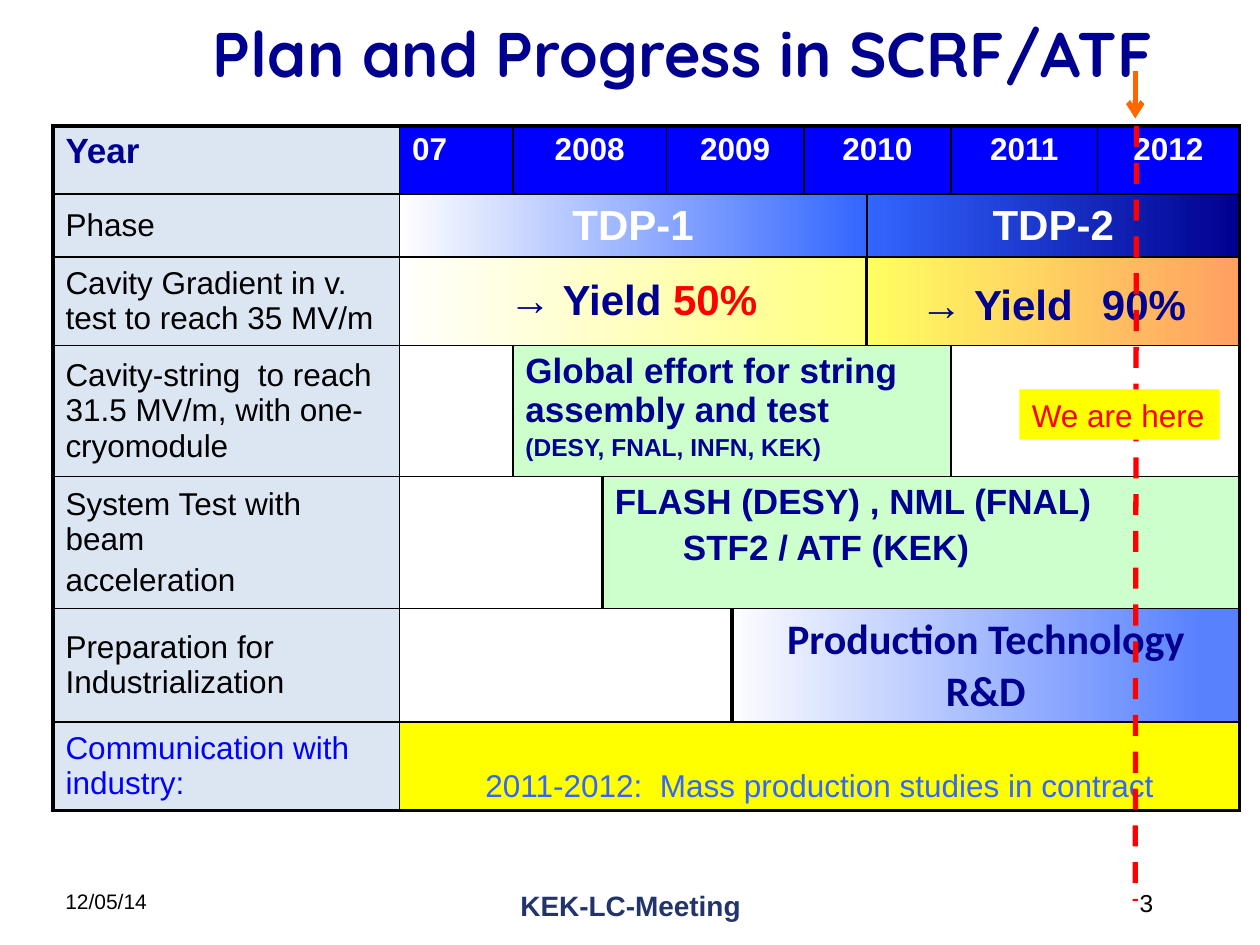
"""Build the SCRF/ATF plan and progress slide."""
from dataclasses import dataclass

from lxml import etree
from pptx import Presentation
from pptx.dml.color import RGBColor
from pptx.enum.dml import MSO_LINE
from pptx.enum.shapes import MSO_CONNECTOR, MSO_SHAPE
from pptx.enum.text import MSO_ANCHOR, PP_ALIGN
from pptx.oxml.ns import qn
from pptx.util import Inches, Pt

LEFT, CENTER, RIGHT = PP_ALIGN.LEFT, PP_ALIGN.CENTER, PP_ALIGN.RIGHT
TOP, MIDDLE, BOTTOM = MSO_ANCHOR.TOP, MSO_ANCHOR.MIDDLE, MSO_ANCHOR.BOTTOM
RECTANGLE, STRAIGHT, DASH = MSO_SHAPE.RECTANGLE, MSO_CONNECTOR.STRAIGHT, MSO_LINE.DASH
NAVY, BLACK, WHITE, RED, YELLOW = "000090", "000000", "FFFFFF", "FF0000", "FFFF00"
BLUE, SKY, PALE, MINT, ORANGE = "0000FF", "3366FF", "DCE6F2", "CCFFCC", "FF6600"
COLUMN_WIDTHS = (2.75, 0.9, 0.71, 0.51, 0.52, 0.57, 0.5, 0.67, 1.16, 1.13)
ROW_HEIGHTS = (0.54, 0.4, 0.53, 0.54, 0.76, 0.7, 0.7)
THIN, HEAVY = 1, 2.25


@dataclass(frozen=True)
class Run:
    text: str
    size: float = 18
    color: str = BLACK
    bold: bool = False
    font: str = "Arial"


@dataclass(frozen=True)
class Line:
    runs: tuple[Run, ...]
    align: PP_ALIGN = LEFT
    indent: float = 0


@dataclass(frozen=True)
class Gradient:
    stops: tuple[tuple[int, str], ...]
    opacity: int = 100


@dataclass(frozen=True)
class Entry:
    span: int
    lines: tuple[Line, ...] = ()
    fill: str | Gradient | None = None
    anchor: MSO_ANCHOR = TOP
    heavy_left: bool = False


def rgb(color: str) -> RGBColor:
    """Turn a hex string into a colour."""
    return RGBColor.from_string(color)


def write(frame, lines: tuple[Line, ...]) -> None:
    """Fill a text frame with formatted lines."""
    for index, line in enumerate(lines):
        paragraph = frame.add_paragraph() if index else frame.paragraphs[0]
        paragraph.alignment = line.align
        if index:
            paragraph.space_before = Pt(0.2 * line.runs[0].size)
        if line.indent:
            paragraph._p.get_or_add_pPr().set("marL", str(Inches(line.indent)))
        for part in line.runs:
            run = paragraph.add_run()
            run.text = part.text
            run.font.size = Pt(part.size)
            run.font.bold = part.bold
            run.font.name = part.font
            run.font.color.rgb = rgb(part.color)


def add_text(slide, left: float, top: float, width: float, height: float,
             line: Line, anchor: MSO_ANCHOR = TOP) -> None:
    """Place one line of text on the slide."""
    frame = slide.shapes.add_textbox(
        Inches(left), Inches(top), Inches(width), Inches(height)).text_frame
    frame.word_wrap = True
    frame.vertical_anchor = anchor
    write(frame, (line,))


def add_borders(cell, widths: dict[str, float]) -> None:
    """Draw black cell borders with the given widths in points."""
    properties = cell._tc.get_or_add_tcPr()
    for side, width in widths.items():
        border = etree.SubElement(properties, qn(f"a:ln{side}"), w=str(Pt(width)))
        solid = etree.SubElement(border, qn("a:solidFill"))
        etree.SubElement(solid, qn("a:srgbClr"), val=BLACK)


def paint(cell, fill: str | Gradient | None) -> None:
    """Give a cell a plain, gradient or empty fill."""
    if fill is None:
        cell.fill.background()
    elif isinstance(fill, str):
        cell.fill.solid()
        cell.fill.fore_color.rgb = rgb(fill)
    else:
        gradient = etree.SubElement(cell._tc.get_or_add_tcPr(), qn("a:gradFill"))
        stops = etree.SubElement(gradient, qn("a:gsLst"))
        for position, color in fill.stops:
            stop = etree.SubElement(stops, qn("a:gs"), pos=str(position * 1000))
            shade = etree.SubElement(stop, qn("a:srgbClr"), val=color)
            if fill.opacity < 100:
                etree.SubElement(shade, qn("a:alpha"), val=str(fill.opacity * 1000))
        etree.SubElement(gradient, qn("a:lin"), ang="0", scaled="0")


def add_plan(slide, plan: list[list[Entry]]) -> None:
    """Draw the schedule table, merging each entry over its span."""
    table = slide.shapes.add_table(
        len(ROW_HEIGHTS), len(COLUMN_WIDTHS), Inches(0.42), Inches(1),
        Inches(sum(COLUMN_WIDTHS)), Inches(sum(ROW_HEIGHTS))).table
    table.first_row = table.horz_banding = False
    for column, width in zip(table.columns, COLUMN_WIDTHS):
        column.width = Inches(width)
    for row, height in zip(table.rows, ROW_HEIGHTS):
        row.height = Inches(height)
    for row, entries in enumerate(plan):
        start = 0
        for entry, following in zip(entries, [*entries[1:], None]):
            end = start + entry.span
            cell = table.cell(row, start)
            if entry.span > 1:
                cell.merge(table.cell(row, end - 1))
            widths = {
                "L": HEAVY if start == 0 or entry.heavy_left else THIN,
                "R": HEAVY if following is None or following.heavy_left else THIN,
                "T": HEAVY if row == 0 else THIN,
                "B": HEAVY if row == len(plan) - 1 else THIN,
            }
            for column in range(start, end):
                add_borders(table.cell(row, column), widths)
                paint(table.cell(row, column), entry.fill)
            cell.vertical_anchor = entry.anchor
            write(cell.text_frame, entry.lines)
            start = end


def add_line(slide, start: tuple[float, float], end: tuple[float, float], color: str):
    """Draw a straight line without shadow and return it."""
    line = slide.shapes.add_connector(STRAIGHT, *map(Inches, start + end))
    line.line.color.rgb = rgb(color)
    line.line.width = Pt(3)
    etree.SubElement(line._element.spPr, qn("a:effectLst"))
    return line


def label(*texts: str, color: str = BLACK) -> Entry:
    """Describe a row heading."""
    return Entry(1, tuple(Line((Run(text, color=color),)) for text in texts), PALE, MIDDLE)


def year(text: str, span: int, align: PP_ALIGN = CENTER) -> Entry:
    """Describe a year heading."""
    return Entry(span, (Line((Run(text, 18, WHITE, True),), align),), BLUE)


def phase(text: str, span: int, start: str, end: str) -> Entry:
    """Describe a phase bar."""
    return Entry(span, (Line((Run(text, 24, WHITE, True),), CENTER),),
                 Gradient(((0, start), (100, end))), MIDDLE)


def strong(text: str, size: float = 20, indent: float = 0) -> Line:
    """Describe a bold navy line."""
    return Line((Run(text, size, NAVY, True),), indent=indent)


def main() -> None:
    """Build and save the slide."""
    deck = Presentation()
    deck.slide_width, deck.slide_height = Inches(10), Inches(7.5)
    slide = deck.slides.add_slide(deck.slide_layouts[6])
    title = Run("Plan and Progress in SCRF/ATF", 36, NAVY, True, "Quicksand")
    add_text(slide, 1.42, 0, 8, 0.83, Line((title,), CENTER), MIDDLE)

    arrow, goal = Run("→ ", 24, NAVY), Run("Yield", 24, NAVY, True)
    first_yield = Line((arrow, goal, Run(" 50%", 24, RED, True)), CENTER)
    second_yield = Line((arrow, goal, Run(" ", 36, NAVY, True),
                         Run(" 90%", 24, NAVY, True)), CENTER)
    production = Run("Production Technology R&D", 24, NAVY, True, "Calibri")
    studies = Run("2011-2012:  Mass production studies in contract", color=SKY)
    add_plan(slide, [
        [Entry(1, (strong("Year"),), PALE), year("07", 1, LEFT), year("2008", 2),
         year("2009", 2), year("2010", 2), year("2011", 1), year("2012", 1)],
        [label("Phase"), phase("TDP-1", 6, WHITE, SKY), phase("TDP-2", 3, SKY, NAVY)],
        [label("Cavity Gradient in v. test to reach 35 MV/m"),
         Entry(6, (first_yield,), Gradient(((0, WHITE), (100, YELLOW)), 51), MIDDLE),
         Entry(3, (second_yield,), Gradient(((0, YELLOW), (100, ORANGE)), 62),
               heavy_left=True)],
        [label("Cavity-string  to reach 31.5 MV/m, with one-cryomodule"), Entry(1),
         Entry(6, (strong("Global effort for string assembly and test"),
                   strong("(DESY, FNAL, INFN, KEK)", 14)), MINT),
         Entry(2, fill=WHITE)],
        [label("System Test with beam", "acceleration"), Entry(2),
         Entry(7, (strong("FLASH (DESY) , NML (FNAL)"),
                   strong("STF2 / ATF (KEK)", indent=0.54)), MINT, heavy_left=True)],
        [label("Preparation for Industrialization"), Entry(4),
         Entry(5, (Line((production,), CENTER),),
               Gradient(((0, WHITE), (92, SKY), (100, SKY)), 81), heavy_left=True)],
        [label("Communication with industry:", color=BLUE),
         Entry(9, (Line((studies,), CENTER),), YELLOW, BOTTOM)],
    ])

    add_text(slide, 0.42, 7, 2.67, 0.5, Line((Run("12/05/14", 12),)))
    add_text(slide, 7.17, 7, 2.08, 0.5, Line((Run("3", 14),), RIGHT))
    meeting = Run("KEK-LC-Meeting", 16, "23346C", True)
    add_text(slide, 3.42, 7, 3.17, 0.5, Line((meeting,), CENTER))

    add_line(slide, (9.02, 1), (9.01, 7.15), RED).line.dash_style = DASH
    here = slide.shapes.add_shape(
        RECTANGLE, Inches(8.09), Inches(3.09), Inches(1.59), Inches(0.4))
    here.shadow.inherit = False
    here.fill.solid()
    here.fill.fore_color.rgb = rgb(YELLOW)
    here.line.fill.background()
    here.text_frame.word_wrap = False
    here.text_frame.vertical_anchor = TOP
    write(here.text_frame, (Line((Run("We are here", color=RED),)),))
    pointer = add_line(slide, (9.01, 0.56), (9.01, 0.94), ORANGE)
    etree.SubElement(pointer.line._get_or_add_ln(), qn("a:tailEnd"), type="arrow")

    deck.save("out.pptx")


if __name__ == "__main__":
    main()
